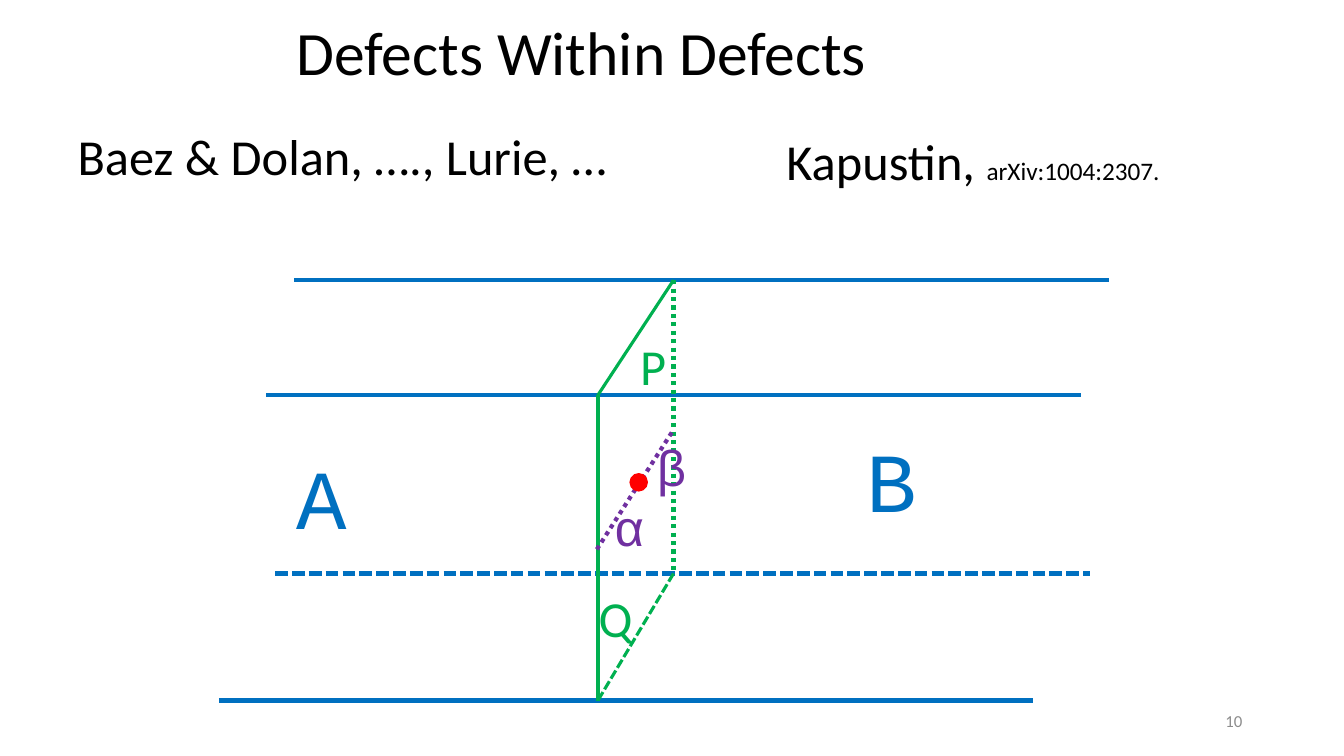
from dataclasses import dataclass

from lxml.etree import SubElement
from pptx import Presentation
from pptx.dml.color import RGBColor
from pptx.enum.dml import MSO_LINE
from pptx.enum.shapes import MSO_CONNECTOR, MSO_SHAPE
from pptx.enum.text import MSO_ANCHOR, MSO_AUTO_SIZE, PP_ALIGN
from pptx.oxml.ns import qn
from pptx.util import Inches, Pt


@dataclass(frozen=True)
class Theme:
    ink: str = "000000"
    grey: str = "8C8C8C"
    region: str = "0070C0"
    wall: str = "00B050"
    junction: str = "7030A0"
    point: str = "FF0000"
    body_font: str = "Calibri"
    greek_font: str = "Arial"
    region_font: str = "Courier New"
    title_size: int = 44
    label_size: int = 36
    region_size: int = 60
    citation_size: int = 18
    number_size: int = 12


THEME = Theme()


def write_text(para, text, size=THEME.label_size, color=THEME.ink, font=THEME.body_font):
    span = para.add_run()
    span.text = text
    span.font.size = Pt(size)
    span.font.name = font
    span.font.color.rgb = RGBColor.from_string(color)


def place(shape, left, top, width, height):
    shape.left, shape.top = Inches(left), Inches(top)
    shape.width, shape.height = Inches(width), Inches(height)


def add_title(page, text):
    title = page.shapes.title
    place(title, 2.84, -0.17, 6.58, 1.45)
    frame = title.text_frame
    frame.auto_size = MSO_AUTO_SIZE.NONE
    frame.vertical_anchor = MSO_ANCHOR.MIDDLE
    para = frame.paragraphs[0]
    para.alignment = PP_ALIGN.LEFT
    para.line_spacing = 0.9
    write_text(para, text, size=THEME.title_size)


def add_label(page, text, left, top, width, height=0.71, indent=0.1,
              align=PP_ALIGN.LEFT, anchor=MSO_ANCHOR.TOP, **text_format):
    box = page.shapes.add_textbox(Inches(left), Inches(top), Inches(width), Inches(height))
    frame = box.text_frame
    frame.word_wrap = True
    frame.margin_left = Inches(indent)
    frame.vertical_anchor = anchor
    para = frame.paragraphs[0]
    para.alignment = align
    write_text(para, text, **text_format)
    return para


def add_line(page, start, end, color, weight=3, dash=None):
    line = page.shapes.add_connector(
        MSO_CONNECTOR.STRAIGHT, *(Inches(value) for value in (*start, *end)))
    line.line.color.rgb = RGBColor.from_string(color)
    line.line.width = Pt(weight)
    if dash:
        line.line.dash_style = dash
    SubElement(line._element.spPr, qn("a:effectLst"))


def add_point(page, left, top, diameter):
    point = page.shapes.add_shape(
        MSO_SHAPE.OVAL, Inches(left), Inches(top), Inches(diameter), Inches(diameter))
    point.shadow.inherit = False
    point.fill.solid()
    point.fill.fore_color.rgb = RGBColor.from_string(THEME.point)
    point.line.color.rgb = RGBColor.from_string(THEME.point)
    point.line.width = Pt(1)


def add_regions(page):
    length = 8.08
    edges = [
        (2.92, 2.78, None),
        (2.17, 6.95, None),
        (2.64, 3.92, None),
        (2.73, 5.69, MSO_LINE.SQUARE_DOT),
    ]
    for left, height, dash in edges:
        add_line(page, (left, height), (left + length, height), THEME.region, dash=dash)


def add_wall(page):
    back_top, back_bottom = (6.68, 2.78), (6.68, 5.69)
    front_top, front_bottom = (5.93, 3.92), (5.93, 6.95)
    add_line(page, back_top, front_top, THEME.wall, weight=2.25)
    add_line(page, front_top, front_bottom, THEME.wall)
    add_line(page, back_top, back_bottom, THEME.wall, dash=MSO_LINE.ROUND_DOT)
    add_line(page, back_bottom, front_bottom, THEME.wall, weight=2.25,
             dash=MSO_LINE.SQUARE_DOT)
    add_label(page, "P", 6.25, 3.28, 1.83, color=THEME.wall)
    add_label(page, "Q", 5.84, 5.78, 2, color=THEME.wall)


def add_junction(page):
    greek = {"color": THEME.junction, "font": THEME.greek_font}
    add_line(page, (5.92, 5.45), (6.67, 4.28), THEME.junction, dash=MSO_LINE.ROUND_DOT)
    add_point(page, 6.25, 4.7, 0.17)
    add_label(page, "α", 6, 4.87, 1.42, **greek)
    add_label(page, "β", 6.42, 4.28, 1.83, **greek)


def add_region_names(page):
    for name, left, top, width in [("A", 2.84, 4.37, 1.58), ("B", 8.5, 4.2, 1.92)]:
        add_label(page, name, left, top, width, 1.11, size=THEME.region_size,
                  color=THEME.region, font=THEME.region_font)


def add_references(page):
    citation = add_label(page, "Kapustin, ", 7.59, 1.24, 5.14, indent=0.21)
    write_text(citation, "arXiv:1004:2307.", size=THEME.citation_size)
    add_label(page, "Baez & Dolan, …., Lurie, …", 0.56, 1.19, 6.53, indent=0.21)


def main():
    deck = Presentation()
    deck.slide_width, deck.slide_height = Inches(13.33), Inches(7.5)
    page = deck.slides.add_slide(deck.slide_layouts[5])
    add_title(page, "Defects Within Defects")
    add_regions(page)
    add_wall(page)
    add_junction(page)
    add_region_names(page)
    add_label(page, "10", 9.42, 6.95, 3, 0.4, align=PP_ALIGN.RIGHT,
              anchor=MSO_ANCHOR.MIDDLE, size=THEME.number_size, color=THEME.grey)
    add_references(page)
    deck.save("out.pptx")


if __name__ == "__main__":
    main()
